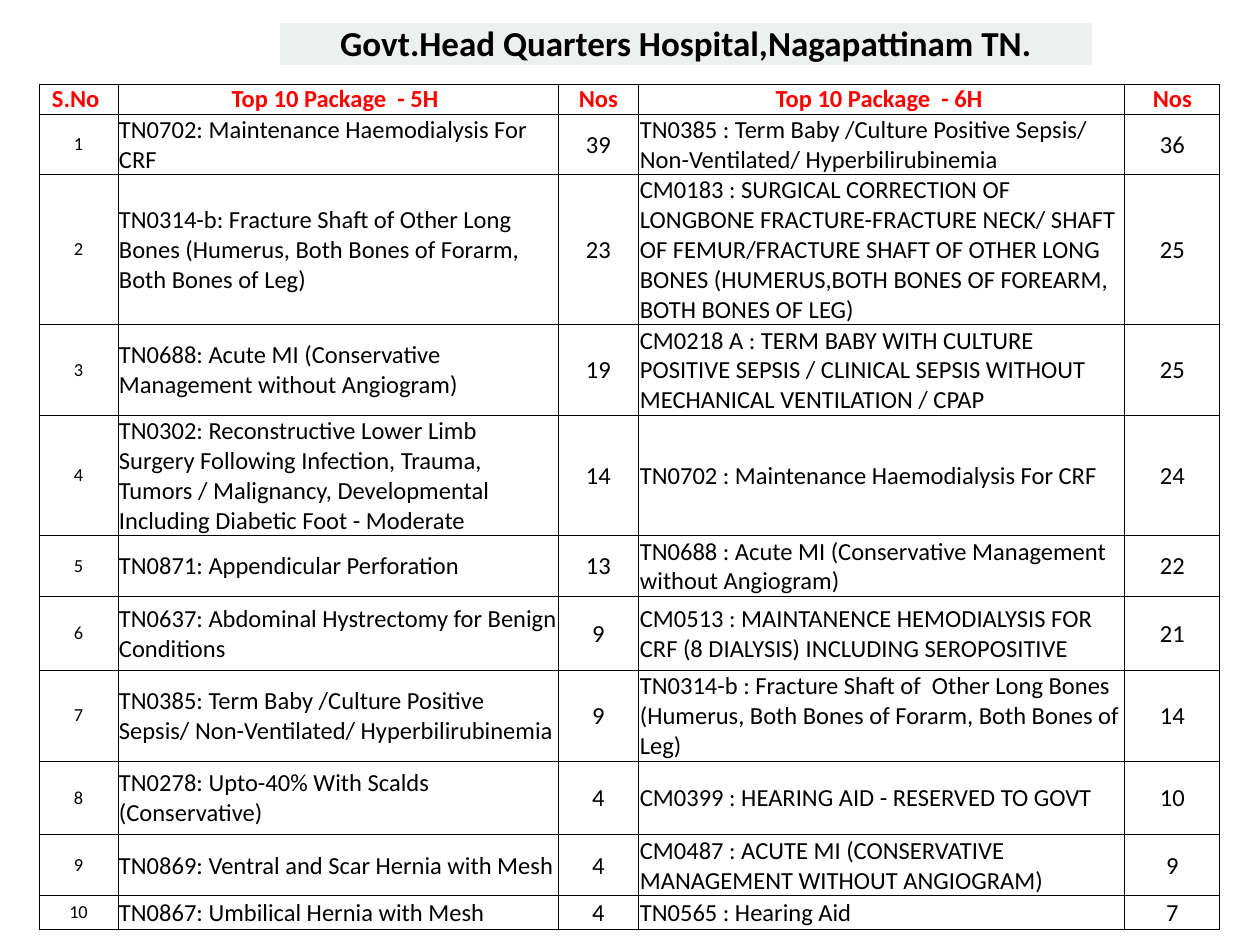
from typing import NamedTuple

from lxml import etree
from pptx import Presentation
from pptx.dml.color import RGBColor
from pptx.enum.text import MSO_ANCHOR, PP_ALIGN
from pptx.oxml.ns import qn
from pptx.util import Emu, Pt

LEFT, CENTER = PP_ALIGN.LEFT, PP_ALIGN.CENTER
MIDDLE, BOTTOM = MSO_ANCHOR.MIDDLE, MSO_ANCHOR.BOTTOM
EMU_PER_PX = 914400 / 126
FONT = "Calibri"
BLACK, RED, WHITE, GREY = "000000", "FF0000", "FFFFFF", "EEF0EF"


class CellStyle(NamedTuple):
    size: float
    color: str = BLACK
    bold: bool = False
    align: PP_ALIGN = CENTER
    anchor: MSO_ANCHOR = MIDDLE
    inset: int = 1
    fill: str = WHITE


class Border(NamedTuple):
    color: str
    width: float


class Grid(NamedTuple):
    left: int
    top: int
    col_widths: list[int]
    row_heights: list[int]
    border: Border


class PackageRow(NamedTuple):
    package_5h: str
    nos_5h: int
    package_6h: str
    nos_6h: int


TITLE = CellStyle(20, bold=True, anchor=BOTTOM, fill=GREY)
HEADER = CellStyle(14, RED, bold=True, inset=0)
SERIAL = CellStyle(10.5, inset=0)
PACKAGE = CellStyle(14, align=LEFT)
COUNT = CellStyle(14)
BODY = [SERIAL, PACKAGE, COUNT, PACKAGE, COUNT]

TITLE_GRID = Grid(279, 22, [814], [42], Border(WHITE, 1))
PACKAGE_GRID = Grid(39, 84, [79, 440, 81, 486, 95],
                    [30, 60, 149, 89, 119, 61, 74, 90, 74, 60, 34], Border(BLACK, 0.5))

HEADINGS = ["S.No ", "Top 10 Package  - 5H ", "Nos", "Top 10 Package  - 6H ", "Nos"]
PACKAGES = [
    PackageRow("TN0702: Maintenance Haemodialysis For CRF", 39,
               "TN0385 : Term Baby /Culture Positive Sepsis/ Non-Ventilated/ Hyperbilirubinemia", 36),
    PackageRow("TN0314-b: Fracture Shaft of Other Long Bones (Humerus, Both Bones of Forarm, "
               "Both Bones of Leg)", 23,
               "CM0183 : SURGICAL CORRECTION OF LONGBONE FRACTURE-FRACTURE NECK/ SHAFT OF "
               "FEMUR/FRACTURE SHAFT OF OTHER LONG BONES (HUMERUS,BOTH BONES OF FOREARM, "
               "BOTH BONES OF LEG)", 25),
    PackageRow("TN0688: Acute MI (Conservative Management without Angiogram)", 19,
               "CM0218 A : TERM BABY WITH CULTURE POSITIVE SEPSIS / CLINICAL SEPSIS WITHOUT "
               "MECHANICAL VENTILATION / CPAP", 25),
    PackageRow("TN0302: Reconstructive Lower Limb Surgery Following Infection, Trauma, "
               "Tumors / Malignancy, Developmental Including Diabetic Foot - Moderate", 14,
               "TN0702 : Maintenance Haemodialysis For CRF", 24),
    PackageRow("TN0871: Appendicular Perforation", 13,
               "TN0688 : Acute MI (Conservative Management without Angiogram)", 22),
    PackageRow("TN0637: Abdominal Hystrectomy for Benign Conditions", 9,
               "CM0513 : MAINTANENCE HEMODIALYSIS FOR CRF (8 DIALYSIS) INCLUDING SEROPOSITIVE", 21),
    PackageRow("TN0385: Term Baby /Culture Positive Sepsis/ Non-Ventilated/ Hyperbilirubinemia", 9,
               "TN0314-b : Fracture Shaft of  Other Long Bones (Humerus, Both Bones of Forarm, "
               "Both Bones of Leg)", 14),
    PackageRow("TN0278: Upto-40% With Scalds (Conservative)", 4,
               "CM0399 : HEARING AID - RESERVED TO GOVT", 10),
    PackageRow("TN0869: Ventral and Scar Hernia with Mesh", 4,
               "CM0487 : ACUTE MI (CONSERVATIVE MANAGEMENT WITHOUT ANGIOGRAM)", 9),
    PackageRow("TN0867: Umbilical Hernia with Mesh", 4, "TN0565 : Hearing Aid", 7),
]


def px(n: int) -> Emu:
    return Emu(round(n * EMU_PER_PX))


def rgb(color: str) -> RGBColor:
    return RGBColor.from_string(color)


def add_borders(cell, border: Border) -> None:
    """Must run before the cell is filled: the schema puts lines ahead of the fill."""
    tc_pr = cell._tc.get_or_add_tcPr()
    for side in ("lnL", "lnR", "lnT", "lnB"):
        ln = etree.SubElement(tc_pr, qn(f"a:{side}"), w=str(Pt(border.width)))
        fill = etree.SubElement(ln, qn("a:solidFill"))
        etree.SubElement(fill, qn("a:srgbClr"), val=border.color)


def fill_cell(cell, text: str, style: CellStyle, border: Border) -> None:
    add_borders(cell, border)
    cell.fill.solid()
    cell.fill.fore_color.rgb = rgb(style.fill)
    inset = px(style.inset)
    layout = {"margin_left": inset, "margin_top": inset, "margin_right": inset,
              "margin_bottom": 0, "vertical_anchor": style.anchor}
    for name, value in layout.items():
        setattr(cell, name, value)
    p = cell.text_frame.paragraphs[0]
    p.alignment = style.align
    r = p.add_run()
    r.text = text
    for name, value in {"name": FONT, "size": Pt(style.size), "bold": style.bold}.items():
        setattr(r.font, name, value)
    r.font.color.rgb = rgb(style.color)


def add_grid(s, grid: Grid, texts: list[list[str]], styles: list[list[CellStyle]]) -> None:
    table = s.shapes.add_table(
        len(grid.row_heights), len(grid.col_widths), px(grid.left), px(grid.top),
        px(sum(grid.col_widths)), px(sum(grid.row_heights))).table
    table.first_row = table.horz_banding = False
    for col, width in zip(table.columns, grid.col_widths):
        col.width = px(width)
    for row, height, row_texts, row_styles in zip(table.rows, grid.row_heights, texts, styles):
        row.height = px(height)
        for cell, text, style in zip(row.cells, row_texts, row_styles):
            fill_cell(cell, text, style, grid.border)


def main() -> None:
    prs = Presentation()
    prs.slide_width, prs.slide_height = px(1260), px(945)
    s = prs.slides.add_slide(prs.slide_layouts[6])
    add_grid(s, TITLE_GRID, [["Govt.Head Quarters Hospital,Nagapattinam TN."]], [[TITLE]])
    body = [[str(value) for value in (number, *row)] for number, row in enumerate(PACKAGES, 1)]
    add_grid(s, PACKAGE_GRID, [HEADINGS, *body],
             [[HEADER] * len(HEADINGS), *[BODY] * len(body)])
    prs.save("out.pptx")


if __name__ == "__main__":
    main()
